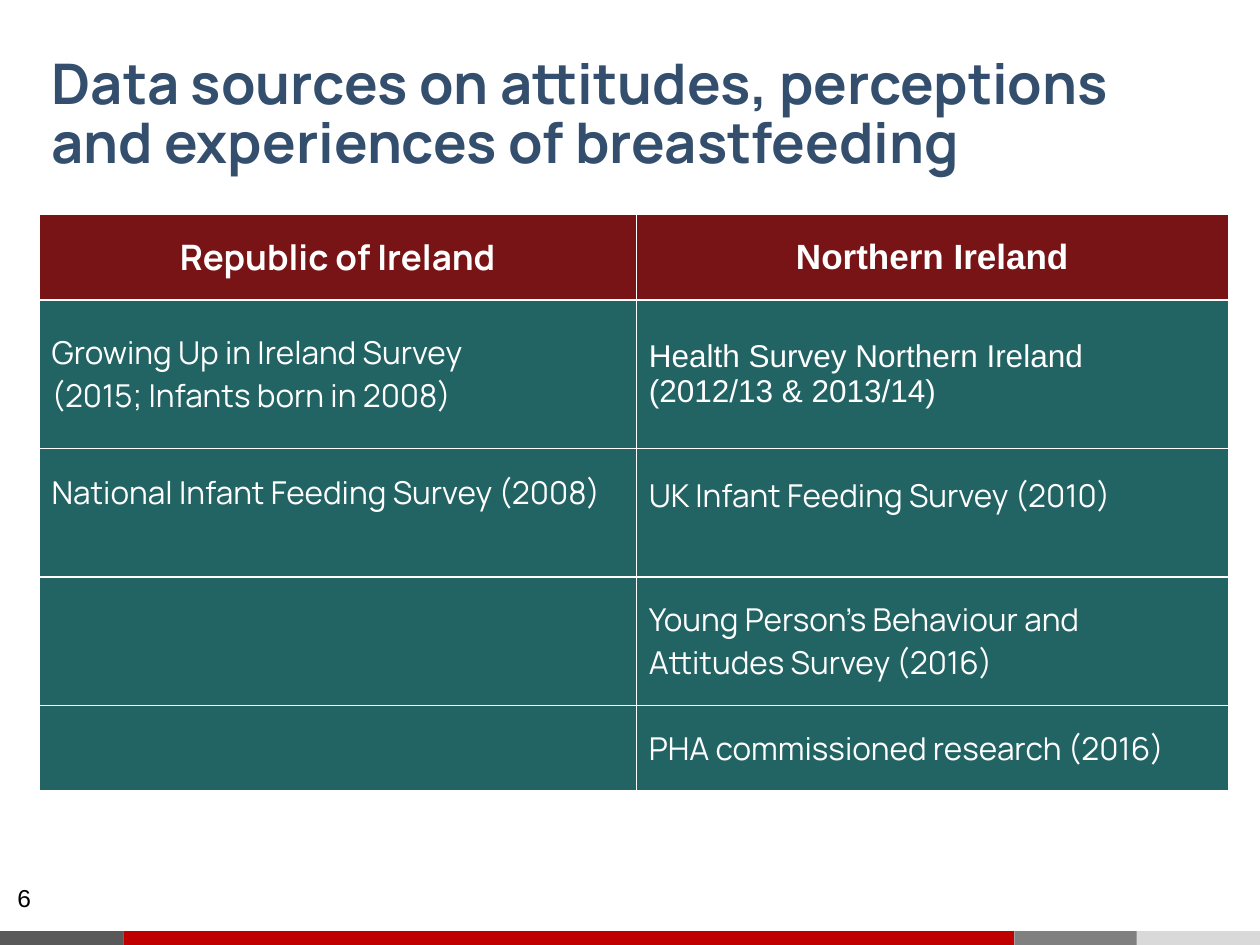
import pptx
import pptx.util
import pptx.dml.color
import pptx.enum.shapes
import pptx.enum.text
import pptx.oxml
import pptx.oxml.ns

Inches = pptx.util.Inches
Pt = pptx.util.Pt
ALIGN = pptx.enum.text.PP_ALIGN
ANCHOR = pptx.enum.text.MSO_ANCHOR

COLORS = {
    "title": "344E6D", "header": "791416", "body": "226364",
    "white": "FFFFFF", "black": "000000",
    "dark": "595959", "red": "C00000", "grey": "808080", "light": "D9D9D9",
}
MARGINS = ("margin_left", "margin_top", "margin_right", "margin_bottom")
FOOTER = [(0, 0.98, "dark"), (0.98, 7.07, "red"), (8.05, 0.98, "grey"), (9.02, 0.98, "light")]
COL_WIDTHS = [4.74, 4.7]
ROW_HEIGHTS = [0.68, 1.18, 1.02, 1.02, 0.68]
ROWS = [
    ("Republic of Ireland", "Northern Ireland"),
    ("Growing Up in Ireland Survey\v(2015; Infants born in 2008)",
     "Health Survey Northern Ireland\v(2012/13 & 2013/14)"),
    ("National Infant Feeding Survey (2008)", "UK Infant Feeding Survey (2010)"),
    ("", "Young Person’s Behaviour and Attitudes Survey (2016)"),
    ("", "PHA commissioned research (2016)"),
]
ARIAL_CELLS = {(0, 1), (1, 1)}
BOTTOM_MARGINS = {(2, 0): 0.43, (2, 1): 0.37}


def rgb(name):
    return pptx.dml.color.RGBColor.from_string(COLORS[name])


def set_attrs(obj, values):
    for name, value in values.items():
        setattr(obj, name, value)


def format_text(p, color, **font):
    set_attrs(p.font, font)
    p.font.color.rgb = rgb(color)


def add_bar(s, left, width, color):
    bar = s.shapes.add_shape(pptx.enum.shapes.MSO_SHAPE.RECTANGLE,
                             Inches(left), Inches(7.39), Inches(width), Inches(0.11))
    bar.shadow.inherit = False
    bar.fill.solid()
    bar.fill.fore_color.rgb = rgb(color)
    bar.line.fill.background()


def add_title(s, text):
    sp = s.shapes.title
    set_attrs(sp, {"left": Inches(0.31), "top": Inches(0.36),
                   "width": Inches(9.08), "height": Inches(1.13)})
    tf = sp.text_frame
    tf.text = text
    set_attrs(tf, {"word_wrap": True, "vertical_anchor": ANCHOR.BOTTOM,
                   "auto_size": pptx.enum.text.MSO_AUTO_SIZE.NONE})
    set_attrs(tf, dict.fromkeys(MARGINS, Inches(0.1)))
    p = tf.paragraphs[0]
    set_attrs(p, {"alignment": ALIGN.LEFT, "line_spacing": 0.88})
    format_text(p, "title", name="Manrope", size=Pt(32), bold=True)


def add_page_number(s, text):
    sp = s.shapes.add_textbox(Inches(0.04), Inches(6.96), Inches(0.55), Inches(0.34))
    tf = sp.text_frame
    tf.word_wrap = True
    tf.text = text
    format_text(tf.paragraphs[0], "black", name="Arial", size=Pt(14))


def add_borders(cell):
    tcPr = cell._tc.get_or_add_tcPr()
    for side in ("lnL", "lnR", "lnT", "lnB"):
        tcPr.append(pptx.oxml.parse_xml(
            f'<a:{side} {pptx.oxml.ns.nsdecls("a")} w="{Pt(1)}"><a:solidFill>'
            f'<a:srgbClr val="{COLORS["white"]}"/></a:solidFill></a:{side}>'))


def fill_cell(cell, text, row, col):
    header = row == 0
    add_borders(cell)
    cell.fill.solid()
    cell.fill.fore_color.rgb = rgb("header" if header else "body")
    set_attrs(cell, dict.fromkeys(MARGINS, Inches(0.1)))
    set_attrs(cell, {"vertical_anchor": ANCHOR.MIDDLE,
                     "margin_bottom": Inches(BOTTOM_MARGINS.get((row, col), 0.1))})
    cell.text = text
    p = cell.text_frame.paragraphs[0]
    p.alignment = ALIGN.CENTER if header else ALIGN.LEFT
    format_text(p, "white", name="Arial" if (row, col) in ARIAL_CELLS else "Manrope",
                size=Pt(20 if header else 18), bold=header)


def add_survey_table(s):
    table = s.shapes.add_table(len(ROWS), len(COL_WIDTHS), Inches(0.31), Inches(1.7),
                               Inches(sum(COL_WIDTHS)), Inches(sum(ROW_HEIGHTS))).table
    set_attrs(table, {"first_row": False, "horz_banding": False})
    for column, width in zip(table.columns, COL_WIDTHS):
        column.width = Inches(width)
    for i, (height, texts) in enumerate(zip(ROW_HEIGHTS, ROWS)):
        table.rows[i].height = Inches(height)
        for j, text in enumerate(texts):
            fill_cell(table.cell(i, j), text, i, j)


def main():
    prs = pptx.Presentation()
    set_attrs(prs, {"slide_width": Inches(10), "slide_height": Inches(7.5)})
    s = prs.slides.add_slide(prs.slide_layouts[5])
    for left, width, color in FOOTER:
        add_bar(s, left, width, color)
    add_title(s, "Data sources on attitudes, perceptions and experiences of breastfeeding")
    add_page_number(s, "6")
    add_survey_table(s)
    prs.save("out.pptx")


if __name__ == "__main__":
    main()
